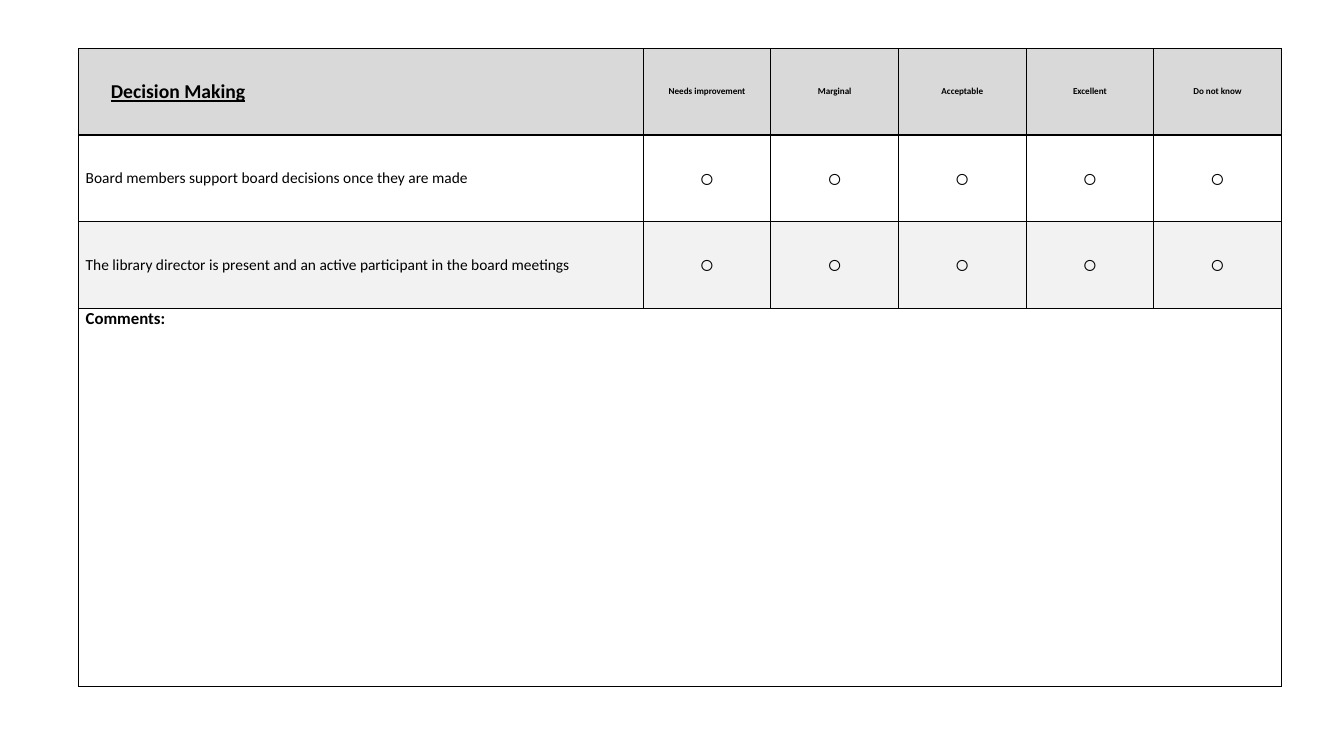
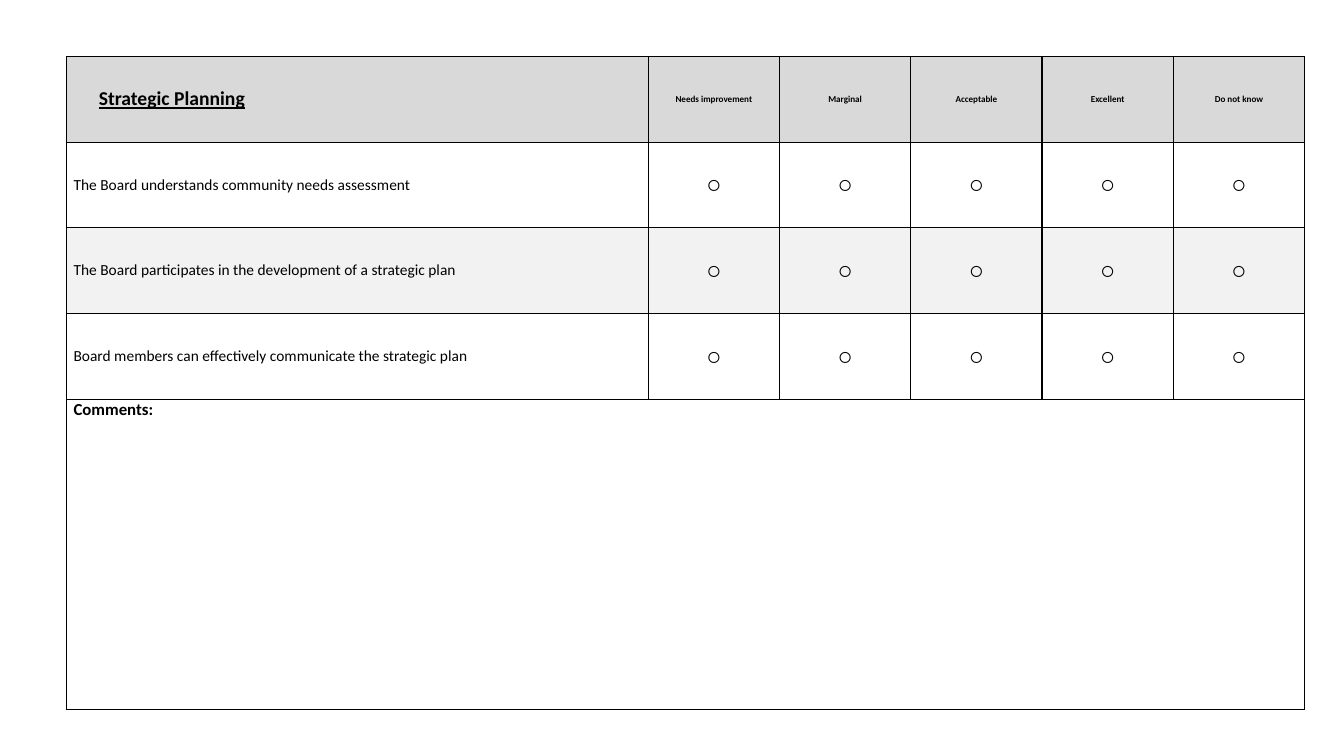
from dataclasses import dataclass

from lxml.etree import SubElement
from pptx import Presentation
from pptx.dml.color import RGBColor
from pptx.enum.text import MSO_ANCHOR, PP_ALIGN
from pptx.oxml.ns import qn
from pptx.presentation import Presentation as Deck
from pptx.table import _Cell
from pptx.util import Inches, Pt


@dataclass(frozen=True)
class TextStyle:
    size: float
    font: str = "Calibri"
    bold: bool = False
    underline: bool = False
    align: PP_ALIGN = PP_ALIGN.LEFT
    anchor: MSO_ANCHOR = MSO_ANCHOR.MIDDLE
    indent: float = 0


@dataclass(frozen=True)
class Theme:
    ink: str = "000000"
    header: str = "D9D9D9"
    band: str = "F2F2F2"
    paper: str = "FFFFFF"
    border: float = 1
    side_margin: float = 0.07
    topic: TextStyle = TextStyle(14, bold=True, underline=True, indent=0.25)
    rating: TextStyle = TextStyle(6.5, bold=True, align=PP_ALIGN.CENTER)
    statement: TextStyle = TextStyle(11)
    choice: TextStyle = TextStyle(18, font="Arial", align=PP_ALIGN.CENTER)
    comments: TextStyle = TextStyle(12, bold=True, anchor=MSO_ANCHOR.TOP)


@dataclass(frozen=True)
class Survey:
    topic: str
    statements: tuple[str, ...]
    left: float
    top: float
    width: float
    height: float
    statement_width: float
    row_height: float


THEME = Theme()
RATINGS = ("Needs improvement", "Marginal", "Acceptable", "Excellent", "Do not know")
SURVEYS = (
    Survey(
        "Decision Making",
        (
            "Board members support board decisions once they are made",
            "The library director is present and an active participant in the board meetings",
        ),
        left=0.78, top=0.48, width=11.93, height=6.33,
        statement_width=5.6, row_height=0.86,
    ),
    Survey(
        "Strategic Planning",
        (
            "The Board understands community needs assessment",
            "The Board participates in the development of a strategic plan",
            "Board members can effectively communicate the strategic plan",
        ),
        left=0.66, top=0.56, width=12.28, height=6.48,
        statement_width=5.77, row_height=0.85,
    ),
)


def draw_borders(cell: _Cell) -> None:
    properties = cell._tc.get_or_add_tcPr()
    for position, side in enumerate(("lnL", "lnR", "lnT", "lnB")):
        line = SubElement(properties, qn(f"a:{side}"), w=str(Pt(THEME.border)))
        ink = SubElement(SubElement(line, qn("a:solidFill")), qn("a:srgbClr"))
        ink.set("val", THEME.ink)
        properties.insert(position, line)


def format_cell(cell: _Cell, fill: str) -> None:
    cell.fill.solid()
    cell.fill.fore_color.rgb = RGBColor.from_string(fill)
    cell.margin_left = cell.margin_right = Inches(THEME.side_margin)
    cell.margin_top = cell.margin_bottom = Inches(0)
    draw_borders(cell)


def write(cell: _Cell, text: str, style: TextStyle) -> None:
    cell.text_frame.text = text
    cell.vertical_anchor = style.anchor
    paragraph = cell.text_frame.paragraphs[0]
    paragraph.alignment = style.align
    if style.indent:
        paragraph._p.get_or_add_pPr().set("marL", str(Inches(style.indent)))
    font = paragraph.runs[0].font
    font.name = style.font
    font.size = Pt(style.size)
    font.bold = style.bold
    font.underline = style.underline
    font.color.rgb = RGBColor.from_string(THEME.ink)


def add_survey(deck: Deck, survey: Survey) -> None:
    slide = deck.slides.add_slide(deck.slide_layouts[6])
    comments_row = len(survey.statements) + 1
    table = slide.shapes.add_table(
        comments_row + 1, len(RATINGS) + 1,
        Inches(survey.left), Inches(survey.top),
        Inches(survey.width), Inches(survey.height),
    ).table
    table.first_row = table.horz_banding = False

    rating_width = (survey.width - survey.statement_width) / len(RATINGS)
    for index, column in enumerate(table.columns):
        column.width = Inches(rating_width if index else survey.statement_width)
    for row in table.rows:
        row.height = Inches(survey.row_height)
    table.rows[comments_row].height = Inches(
        survey.height - comments_row * survey.row_height
    )

    bands = [THEME.paper if i % 2 == 0 else THEME.band for i in range(len(survey.statements))]
    for row, fill in zip(table.rows, [THEME.header, *bands, THEME.paper]):
        for cell in row.cells:
            format_cell(cell, fill)

    write(table.cell(0, 0), survey.topic, THEME.topic)
    for column, rating in enumerate(RATINGS, start=1):
        write(table.cell(0, column), rating, THEME.rating)
    for row, statement in enumerate(survey.statements, start=1):
        write(table.cell(row, 0), statement, THEME.statement)
        for column in range(1, len(RATINGS) + 1):
            write(table.cell(row, column), "○", THEME.choice)

    comments = table.cell(comments_row, 0)
    comments.merge(table.cell(comments_row, len(RATINGS)))
    write(comments, "Comments:", THEME.comments)


def main() -> None:
    deck = Presentation()
    deck.slide_width = Inches(13.33)
    deck.slide_height = Inches(7.5)
    for survey in SURVEYS:
        add_survey(deck, survey)
    deck.save("out.pptx")


if __name__ == "__main__":
    main()
